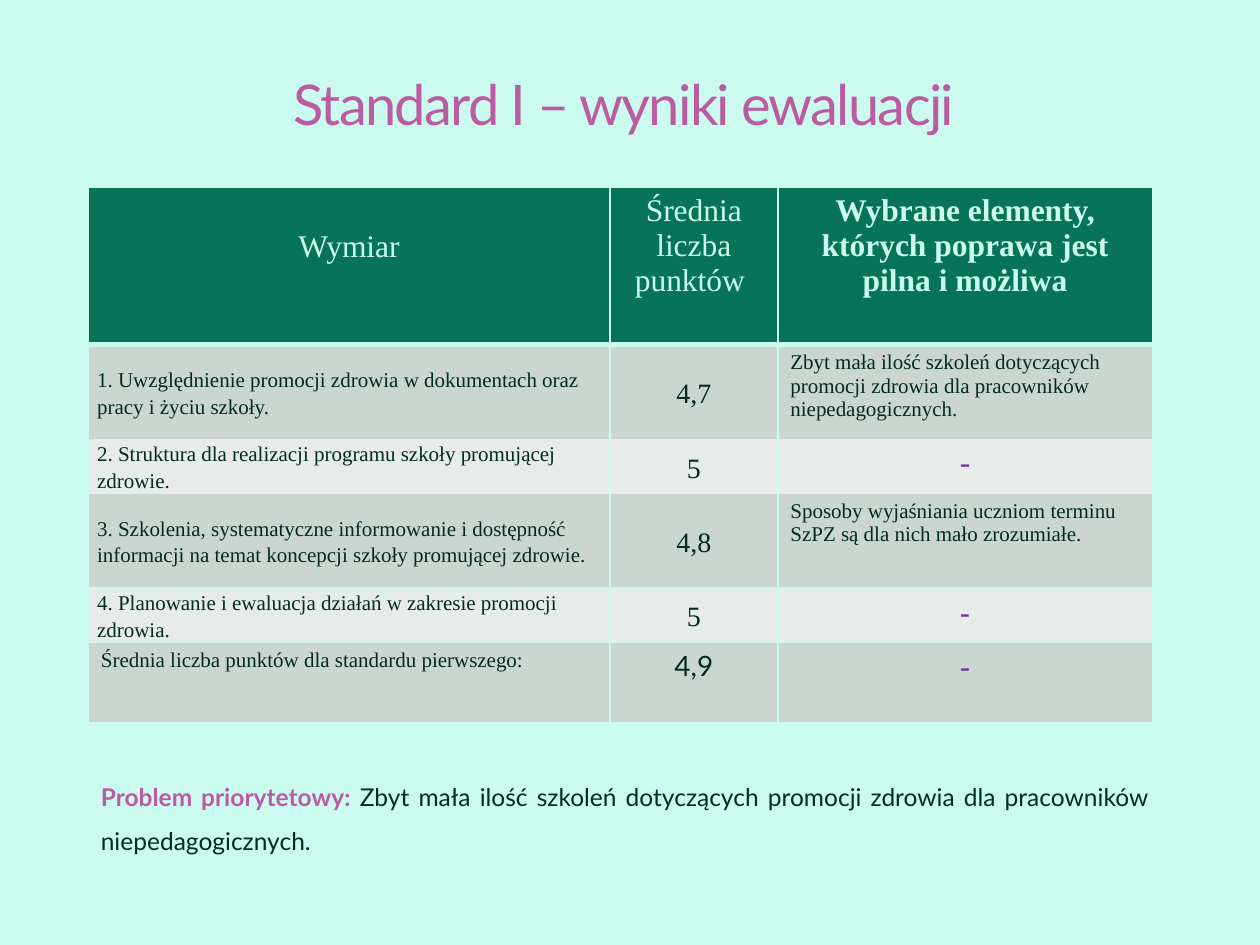
from lxml.etree import SubElement
from pptx import Presentation
from pptx.dml.color import RGBColor
from pptx.enum.text import MSO_ANCHOR, PP_ALIGN
from pptx.oxml import parse_xml
from pptx.oxml.ns import nsdecls, qn
from pptx.util import Pt

COLORS = {
    "mint": "CBFBEE", "green": "087456", "dark_band": "CCD6D1",
    "light_band": "E7EBE9", "ink": "032B1F", "pink": "BB5BA2",
    "purple": "7030A0", "outline": "B3DDD2",
}
SERIF, SANS = "Times New Roman", "Lato"
COLUMN_WIDTHS = (298, 96, 214)
ROW_HEIGHTS = (90, 54, 31, 54, 31, 46)
HEADERS = ("Wymiar", "Średnia liczba punktów ",
           "Wybrane elementy, których poprawa jest pilna i możliwa")
RESULTS = (
    ("1. Uwzględnienie promocji zdrowia w dokumentach oraz pracy i życiu szkoły.", "4,7",
     "Zbyt mała ilość szkoleń dotyczących promocji zdrowia dla pracowników niepedagogicznych."),
    ("2. Struktura dla realizacji programu szkoły promującej zdrowie.", "5", "-"),
    ("3. Szkolenia, systematyczne informowanie i dostępność informacji na temat "
     "koncepcji szkoły promującej zdrowie.", "4,8",
     "Sposoby wyjaśniania uczniom terminu SzPZ są dla nich mało zrozumiałe."),
    ("4. Planowanie i ewaluacja działań w zakresie promocji zdrowia.", "5", "-"),
    ("Średnia liczba punktów dla standardu pierwszego:", "4,9", "-"),
)


def rgb(name):
    return RGBColor.from_string(COLORS[name])


def style_run(run, size, color, font=SANS, bold=False):
    run.font.size = Pt(size)
    run.font.name = font
    run.font.bold = bold
    run.font.color.rgb = rgb(color)


def add_title(slide):
    title = slide.shapes.title
    title.left, title.top, title.width, title.height = Pt(36), Pt(28), Pt(648), Pt(62)
    title.text_frame.text = "Standard I – wyniki ewaluacji "
    title.text_frame.vertical_anchor = MSO_ANCHOR.MIDDLE
    heading = title.text_frame.paragraphs[0]
    heading.alignment = PP_ALIGN.CENTER
    run = heading.runs[0]
    style_run(run, 32, "pink")
    properties = run.font._element
    properties.set("spc", "-100")
    properties.insert(0, parse_xml(
        f'<a:ln {nsdecls("a")} w="3175"><a:solidFill><a:srgbClr val="{COLORS["outline"]}">'
        '<a:alpha val="25000"/></a:srgbClr></a:solidFill></a:ln>'))


def set_borders(cell, bottom_width):
    properties = cell._tc.get_or_add_tcPr()
    for side, width in (("L", 1), ("R", 1), ("T", 1), ("B", bottom_width)):
        line = SubElement(properties, qn(f"a:ln{side}"), w=str(Pt(width)))
        fill = SubElement(line, qn("a:solidFill"))
        SubElement(fill, qn("a:srgbClr"), val=COLORS["mint"])


def fill_cell(cell, text, band, size, color, font=SERIF, bold=False, centered=True,
              bottom_width=1):
    set_borders(cell, bottom_width)
    cell.fill.solid()
    cell.fill.fore_color.rgb = rgb(band)
    paragraph = cell.text_frame.paragraphs[0]
    paragraph.text = text
    paragraph.alignment = PP_ALIGN.CENTER if centered else PP_ALIGN.LEFT
    style_run(paragraph.runs[0], size, color, font, bold)


def set_compact(cell):
    """Centre the cell vertically, with tight margins and looser lines."""
    cell.vertical_anchor = MSO_ANCHOR.MIDDLE
    cell.margin_left = cell.margin_right = Pt(5)
    cell.margin_top = cell.margin_bottom = Pt(0)
    paragraph = cell.text_frame.paragraphs[0]
    paragraph.line_spacing = 1.15
    paragraph.space_after = Pt(10)


def add_results_table(slide):
    table = slide.shapes.add_table(
        len(ROW_HEIGHTS), len(COLUMN_WIDTHS), Pt(50.5), Pt(107),
        Pt(sum(COLUMN_WIDTHS)), Pt(sum(ROW_HEIGHTS))).table
    for column, width in zip(table.columns, COLUMN_WIDTHS):
        column.width = Pt(width)
    for row, height in zip(table.rows, ROW_HEIGHTS):
        row.height = Pt(height)

    for index, header in enumerate(HEADERS):
        fill_cell(table.cell(0, index), header, "green", 18, "mint",
                  bold=index == 2, bottom_width=3)
    table.cell(0, 0).margin_top = Pt(24)

    for index, (dimension, score, improvement) in enumerate(RESULTS, start=1):
        band = "dark_band" if index % 2 else "light_band"
        is_average = index == len(RESULTS)
        dimension_cell, score_cell, improvement_cell = table.rows[index].cells
        fill_cell(dimension_cell, dimension, band, 12, "ink", centered=False)
        fill_cell(score_cell, score, band, 16, "ink", SANS if is_average else SERIF)
        if improvement == "-":
            fill_cell(improvement_cell, improvement, band, 18, "purple",
                      SERIF if index == 2 else SANS)
        else:
            fill_cell(improvement_cell, improvement, band, 12, "ink", centered=False)
        if not is_average:
            set_compact(dimension_cell)
            set_compact(score_cell)


def add_priority_problem(slide):
    frame = slide.shapes.add_textbox(Pt(50.5), Pt(435), Pt(613), Pt(73)).text_frame
    frame.word_wrap = True
    paragraph = frame.paragraphs[0]
    paragraph.alignment = PP_ALIGN.JUSTIFY
    paragraph.line_spacing = 1.5
    label, problem = paragraph.add_run(), paragraph.add_run()
    label.text = "Problem priorytetowy: "
    problem.text = RESULTS[0][2]
    style_run(label, 14, "pink", bold=True)
    style_run(problem, 14, "ink")


def main():
    presentation = Presentation()
    presentation.slide_width, presentation.slide_height = Pt(720), Pt(540)
    slide = presentation.slides.add_slide(presentation.slide_layouts[5])
    slide.background.fill.solid()
    slide.background.fill.fore_color.rgb = rgb("mint")
    add_results_table(slide)
    add_title(slide)
    add_priority_problem(slide)
    presentation.save("out.pptx")


if __name__ == "__main__":
    main()
